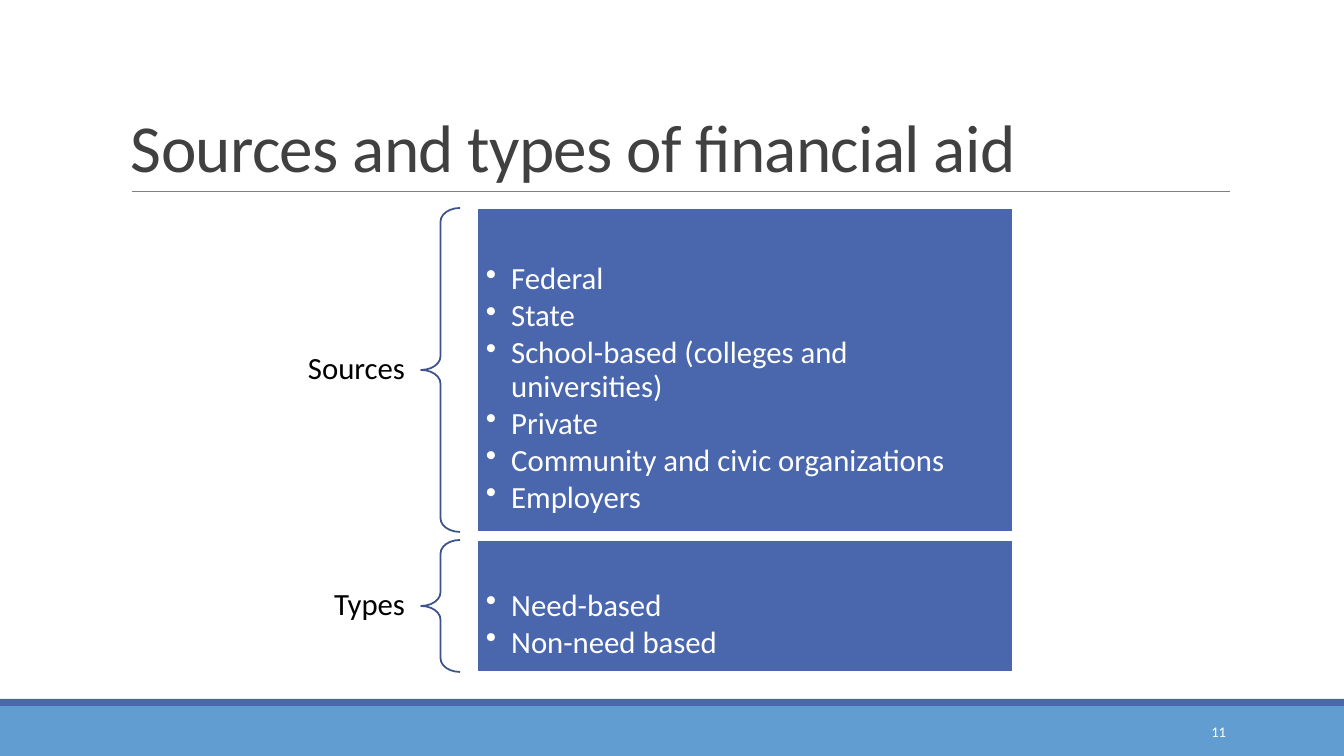
from lxml import etree
from pptx import Presentation
from pptx import util as u
from pptx.dml.color import RGBColor
from pptx.enum import shapes, text
from pptx.oxml import ns

WHITE = RGBColor(0xFF, 0xFF, 0xFF)
BLACK = RGBColor(0x00, 0x00, 0x00)
CHARCOAL = RGBColor(0x40, 0x40, 0x40)
GRAY = RGBColor(0x80, 0x80, 0x80)
SKY = RGBColor(0x62, 0x9D, 0xD1)
BLUE = RGBColor(0x4A, 0x66, 0xAC)
NAVY = RGBColor(0x3B, 0x52, 0x8A)

WIDTH, HEIGHT = 1344, 756
SCALE = u.Inches(7.5) / HEIGHT
FONT = "Calibri"
BODY_SIZE = 22
GROUPS = [
    ("Sources", 208, 324, [
        "Federal",
        "State",
        "School-based (colleges and universities)",
        "Private",
        "Community and civic organizations",
        "Employers",
    ]),
    ("Types", 540, 132, ["Need-based", "Non-need based"]),
]


def px(length):
    return u.Emu(round(length * SCALE))


class SlideBuilder:
    def __init__(self, slide):
        self.slide = slide

    def shape(self, kind, box, fill=None, line=None):
        shape = self.slide.shapes.add_shape(kind, *map(px, box))
        shape.shadow.inherit = False
        if fill is None:
            shape.fill.background()
        else:
            shape.fill.solid()
            shape.fill.fore_color.rgb = fill
        if line is None:
            shape.line.fill.background()
        else:
            shape.line.color.rgb = line
            shape.line.width = u.Pt(1.25)
        return shape

    def rectangle(self, box, fill, line=None):
        return self.shape(shapes.MSO_SHAPE.RECTANGLE, box, fill, line)

    def brace(self, box):
        brace = self.shape(shapes.MSO_SHAPE.LEFT_BRACE, box, line=NAVY)
        brace.adjustments[0] = 0.35
        brace.adjustments[1] = 0.5

    def rule(self, left, right, y):
        rule = self.slide.shapes.add_connector(
            shapes.MSO_CONNECTOR.STRAIGHT, px(left), px(y), px(right), px(y))
        rule.line.color.rgb = GRAY
        rule.line.width = u.Pt(0.5)
        etree.SubElement(rule._element.spPr, ns.qn("a:effectLst"))

    def set_text(self, shape, lines, size, color, insets, align=text.PP_ALIGN.LEFT,
                 anchor=text.MSO_ANCHOR.MIDDLE, spacing=1.0):
        frame = shape.text_frame
        frame.text = "\n".join(lines)
        frame.word_wrap = True
        frame.vertical_anchor = anchor
        frame.margin_left, frame.margin_top, frame.margin_right, frame.margin_bottom = map(px, insets)
        for paragraph in frame.paragraphs:
            paragraph.alignment = align
            paragraph.line_spacing = spacing
            for run in paragraph.runs:
                run.font.name = FONT
                run.font.size = u.Pt(size)
                run.font.color.rgb = color
        return frame

    def label(self, box, content, size, color, insets=(10, 5, 10, 5), **layout):
        textbox = self.slide.shapes.add_textbox(*map(px, box))
        return self.set_text(textbox, [content], size, color, insets, **layout)

    def title(self, box, content):
        frame = self.label(box, content, 48, CHARCOAL,
                           anchor=text.MSO_ANCHOR.BOTTOM, spacing=0.85)
        frame.paragraphs[0].runs[0].font._element.set("spc", "-50")

    def bullet_panel(self, box, items):
        panel = self.rectangle(box, BLUE, WHITE)
        frame = self.set_text(panel, items, BODY_SIZE, WHITE, (9, 47, 14, 9), spacing=0.9)
        for paragraph in frame.paragraphs:
            paragraph.space_after = u.Pt(2.7)
            properties = paragraph._p.get_or_add_pPr()
            properties.set("marL", str(u.Inches(0.25)))
            properties.set("indent", str(-u.Inches(0.25)))
            etree.SubElement(properties, ns.qn("a:buChar")).set("char", "•")

    def group(self, name, top, height, items):
        self.label((225, top + height // 2 - 24, 197, 48), name, BODY_SIZE, BLACK,
                   insets=(17, 6, 17, 6), align=text.PP_ALIGN.RIGHT, spacing=0.9)
        self.brace((421, top, 39, height))
        self.bullet_panel((477, top, 536, height), items)


def main():
    presentation = Presentation()
    presentation.slide_width = px(WIDTH)
    presentation.slide_height = px(HEIGHT)
    builder = SlideBuilder(presentation.slides.add_slide(presentation.slide_layouts[6]))
    builder.rectangle((0, 706, WIDTH, 50), SKY)
    builder.rectangle((0, 699, WIDTH, 7), BLUE)
    builder.rule(132, 1230, 191)
    builder.title((121, 31, 1109, 160), "Sources and types of financial aid")
    for group in GROUPS:
        builder.group(*group)
    builder.label((1092, 712, 144, 40), "11", 10.5, WHITE, align=text.PP_ALIGN.RIGHT)
    presentation.save("out.pptx")


if __name__ == "__main__":
    main()
